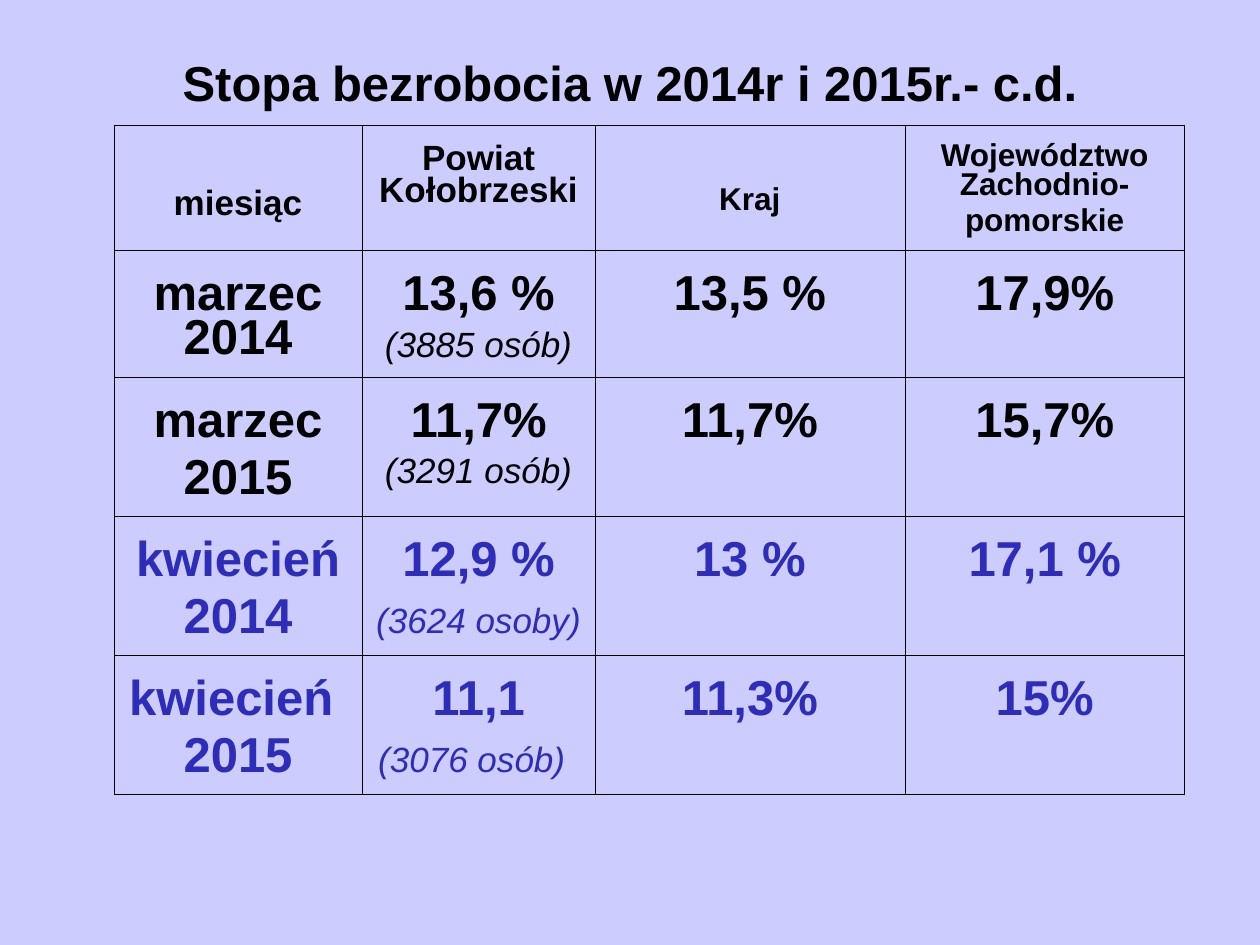
import pptx
import pptx.util
import pptx.dml.color
import pptx.enum.text
import pptx.oxml.ns
import lxml.etree

Pt = pptx.util.Pt
BLACK = "000000"
BLUE = "2D2DB9"
WIDTHS = [142, 133, 177, 160]
HEIGHTS = [68.3, 68.5, 76, 75.5, 76]
HEADS = [
    ("miesiąc", 20, 37.5),
    ("Powiat Kołobrzeski", 20, 11.5),
    ("Kraj", 18, 35.5),
    ("Województwo Zachodnio-\npomorskie", 18, 10.8),
]
ROWS = [
    (BLACK, ["marzec 2014", "13,6 %\n(3885 osób)", "13,5 %", "17,9%"]),
    (BLACK, ["marzec\n2015", "11,7%\n(3291 osób)", "11,7%", "15,7%"]),
    (BLUE, ["kwiecień\n2014", "12,9 %\n(3624 osoby) ", "13 %", "17,1 %"]),
    (BLUE, ["kwiecień \n2015", "11,1\n(3076 osób) ", "11,3%", "15%"]),
]


def tint(code):
    return pptx.dml.color.RGBColor.from_string(code)


def add_run(para, text, size, color, bold=True, italic=False):
    run = para.add_run()
    run.text = text
    font = run.font
    font.name = "Arial"
    font.size = Pt(size)
    font.bold = bold
    font.italic = italic
    font.color.rgb = tint(color)


def write(frame, text, size=28, color=BLACK, lead=None, gap=0):
    for num, line in enumerate(text.split("\n")):
        para = frame.add_paragraph() if num else frame.paragraphs[0]
        para.alignment = pptx.enum.text.PP_ALIGN.CENTER
        para.space_before = Pt(gap)
        if lead:
            para.line_spacing = lead
        if line.startswith("("):
            note = line.rstrip()
            add_run(para, note, 20, color, bold=False, italic=True)
            if note != line:
                add_run(para, " ", size, color)
        else:
            add_run(para, line, size, color)


def add_edge(cell, side, width):
    props = cell._tc.get_or_add_tcPr()
    qn = pptx.oxml.ns.qn
    line = lxml.etree.SubElement(props, qn("a:ln" + side), w=str(Pt(width)))
    fill = lxml.etree.SubElement(line, qn("a:solidFill"))
    lxml.etree.SubElement(fill, qn("a:srgbClr"), val=BLACK)


def add_cell(table, row, col, text, size, color, top, gap):
    cell = table.cell(row, col)
    cell.margin_left = cell.margin_right = Pt(7.2)
    cell.margin_top = Pt(top)
    cell.margin_bottom = Pt(3.6)
    write(cell.text_frame, text, size=size, color=color, lead=0.81, gap=gap)
    outer = {
        "L": col == 0,
        "R": col == len(WIDTHS) - 1,
        "T": row == 0,
        "B": row == len(HEIGHTS) - 1,
    }
    for side, rim in outer.items():
        add_edge(cell, side, 0.23 if rim else 0.11)
    cell.fill.background()


def add_title(slide):
    box = slide.shapes.add_textbox(Pt(36), Pt(21.6), Pt(648), Pt(50))
    frame = box.text_frame
    frame.word_wrap = True
    frame.vertical_anchor = pptx.enum.text.MSO_ANCHOR.MIDDLE
    write(frame, "Stopa bezrobocia w 2014r i 2015r.- c.d.")


def add_rates(slide):
    frame = slide.shapes.add_table(
        len(HEIGHTS), len(WIDTHS), Pt(65), Pt(71.5), Pt(sum(WIDTHS)), Pt(sum(HEIGHTS))
    )
    table = frame.table
    table.first_row = table.horz_banding = False
    for col, width in zip(table.columns, WIDTHS):
        col.width = Pt(width)
    for row, height in zip(table.rows, HEIGHTS):
        row.height = Pt(height)
    for col, (text, size, top) in enumerate(HEADS):
        add_cell(table, 0, col, text, size, BLACK, top, 4.5)
    for row, (color, texts) in enumerate(ROWS, 1):
        for col, text in enumerate(texts):
            add_cell(table, row, col, text, 28, color, 14.4, 7)


def main():
    deck = pptx.Presentation()
    deck.slide_width = Pt(720)
    deck.slide_height = Pt(540)
    slide = deck.slides.add_slide(deck.slide_layouts[6])
    back = slide.background.fill
    back.solid()
    back.fore_color.rgb = tint("CCCCFF")
    add_title(slide)
    add_rates(slide)
    deck.save("out.pptx")


if __name__ == "__main__":
    main()
